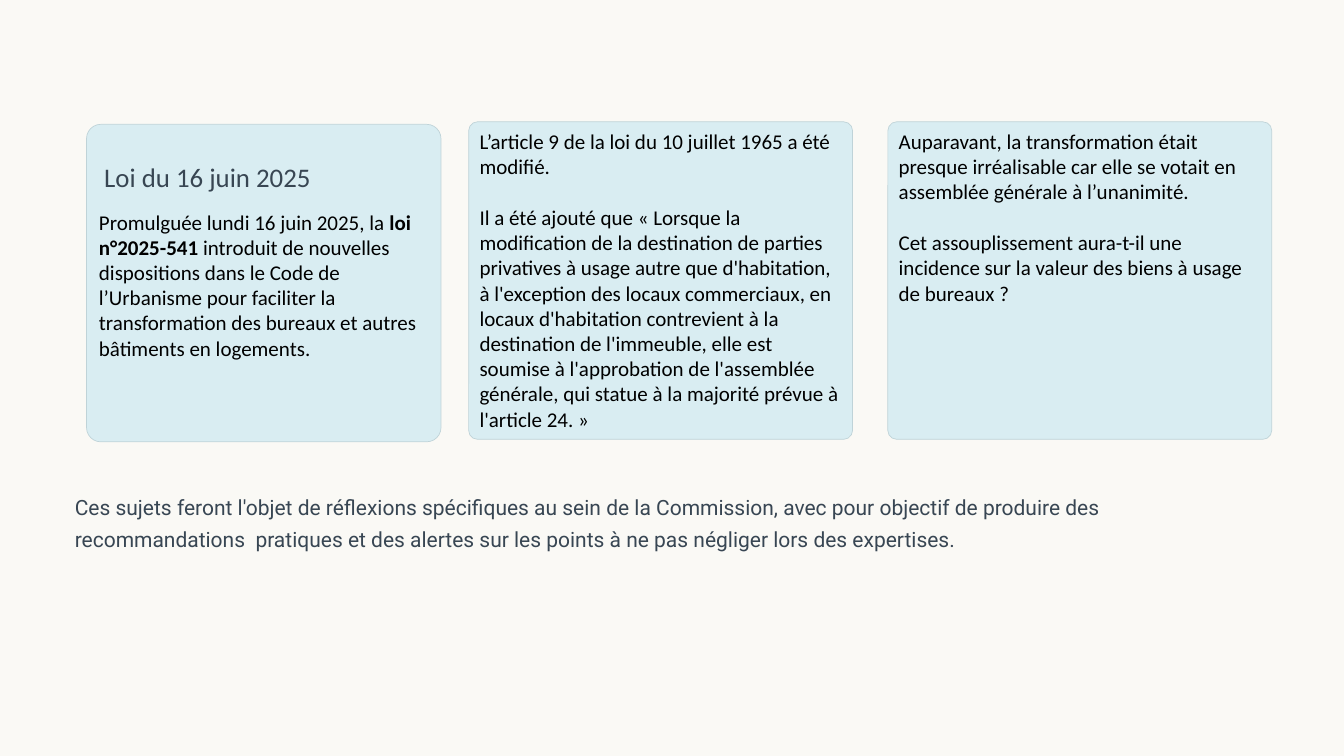
from pptx import Presentation
from pptx.dml.color import RGBColor
from pptx.enum.shapes import MSO_SHAPE
from pptx.enum.text import MSO_ANCHOR, PP_ALIGN
from pptx.util import Inches, Pt

ROUNDED = MSO_SHAPE.ROUNDED_RECTANGLE
TOP = MSO_ANCHOR.TOP
LEFT = PP_ALIGN.LEFT

CREAM = RGBColor(0xFA, 0xF9, 0xF5)
PALE_BLUE = RGBColor(0xD9, 0xED, 0xF2)
BORDER = RGBColor(0xBF, 0xD3, 0xD8)
BLACK = RGBColor(0, 0, 0)
SLATE = RGBColor(0x38, 0x46, 0x53)

prs = Presentation()
prs.slide_width = Inches(16)
prs.slide_height = Inches(9)
slide = prs.slides.add_slide(prs.slide_layouts[6])
slide.background.fill.solid()
slide.background.fill.fore_color.rgb = CREAM


def add_run(paragraph, text, font, size, color, bold=False):
    run = paragraph.add_run()
    run.text = text
    run.font.name = font
    run.font.size = Pt(size)
    run.font.color.rgb = color
    run.font.bold = bold


def add_label(left, top, width, height, text, font, size, spacing):
    frame = slide.shapes.add_textbox(
        Inches(left), Inches(top), Inches(width), Inches(height)).text_frame
    frame.word_wrap = True
    frame.margin_left = frame.margin_right = 0
    frame.margin_top = frame.margin_bottom = 0
    frame.paragraphs[0].line_spacing = Pt(spacing)
    add_run(frame.paragraphs[0], text, font, size, SLATE)


# Cards: left, top, width, corner, top margin, paragraphs of (text, bold) runs
cards = [
    (1.03, 1.48, 4.22, 0.045, 0.96, [
        [("Promulguée lundi 16 juin 2025, la ", False),
         ("loi n°2025-541", True),
         (" introduit de nouvelles dispositions dans le Code de l’Urbanisme "
          "pour faciliter la transformation des bureaux et autres bâtiments "
          "en logements.", False)],
    ]),
    (5.58, 1.45, 4.57, 0.028, 0.05, [
        [("L’article 9 de la loi du 10 juillet 1965 a été modifié.", False)],
        [("Il a été ajouté que « Lorsque la modification de la destination "
          "de parties privatives à usage autre que d'habitation, à "
          "l'exception des locaux commerciaux, en locaux d'habitation "
          "contrevient à la destination de l'immeuble, elle est soumise à "
          "l'approbation de l'assemblée générale, qui statue à la majorité "
          "prévue à l'article 24. »", False)],
    ]),
    (10.57, 1.45, 4.57, 0.028, 0.05, [
        [("Auparavant, la transformation était presque irréalisable car elle "
          "se votait en assemblée générale à l’unanimité.", False)],
        [("Cet assouplissement aura-t-il une incidence sur la valeur des "
          "biens à usage de bureaux ?", False)],
    ]),
]
for left, top, width, corner, margin_top, paragraphs in cards:
    card = slide.shapes.add_shape(
        ROUNDED, Inches(left), Inches(top), Inches(width), Inches(3.78))
    card.adjustments[0] = corner
    card.shadow.inherit = False
    card.fill.solid()
    card.fill.fore_color.rgb = PALE_BLUE
    card.line.color.rgb = BORDER
    card.line.width = Pt(0.6)
    frame = card.text_frame
    frame.word_wrap = True
    frame.vertical_anchor = TOP
    frame.margin_top = Inches(margin_top)
    for index, runs in enumerate(paragraphs):
        paragraph = frame.add_paragraph() if index else frame.paragraphs[0]
        paragraph.alignment = LEFT
        if index:
            paragraph.space_before = Pt(22)
        for text, bold in runs:
            add_run(paragraph, text, "Calibri", 18, BLACK, bold)

# Heading of the first card
add_label(1.24, 1.9, 3.11, 0.71, "Loi du 16 juin 2025", "Calibri", 23, 28.5)

# Closing statement
add_label(0.89, 5.81, 14.21, 2.29,
          "Ces sujets feront l'objet de réflexions spécifiques au sein de la "
          "Commission, avec pour objectif de produire des recommandations  "
          "pratiques et des alertes sur les points à ne pas négliger lors des "
          "expertises.", "Roboto", 18, 27.5)

prs.save("out.pptx")
